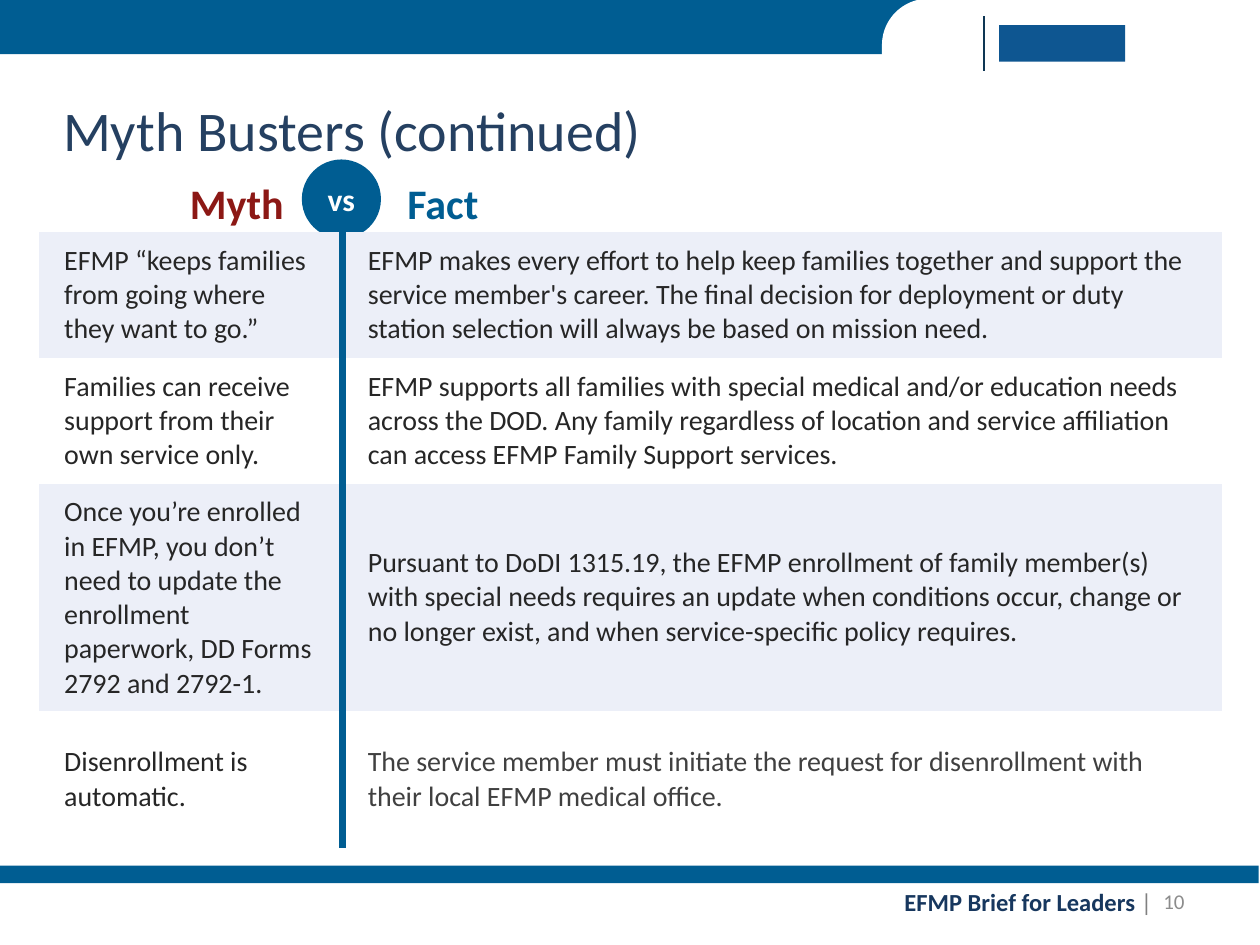
from lxml.etree import SubElement
from pptx import Presentation
from pptx.dml.color import RGBColor
from pptx.enum.shapes import MSO_CONNECTOR, MSO_SHAPE
from pptx.enum.text import MSO_ANCHOR, MSO_AUTO_SIZE, PP_ALIGN
from pptx.oxml import parse_xml
from pptx.oxml.ns import nsdecls, qn
from pptx.util import Inches, Pt

FONT = "Calibri"
BLUE = RGBColor(0x00, 0x5D, 0x92)
MARK_BLUE = RGBColor(0x0E, 0x56, 0x91)
RULE_NAVY = RGBColor(0x0E, 0x36, 0x54)
FOOTER_NAVY = RGBColor(0x17, 0x37, 0x5E)
TITLE_NAVY = RGBColor(0x25, 0x40, 0x61)
RED = RGBColor(0x8C, 0x18, 0x15)
INK = RGBColor(0x26, 0x26, 0x26)
SOFT_INK = RGBColor(0x40, 0x40, 0x40)
GREY = RGBColor(0x80, 0x80, 0x80)
NUMBER_GREY = RGBColor(0x8C, 0x8C, 0x8C)
BAND = RGBColor(0xEC, 0xEF, 0xF8)
WHITE = RGBColor(0xFF, 0xFF, 0xFF)

PLAIN_TABLE_STYLE = "{2D5ABB26-0587-4C30-8999-92F81FD0307C}"
COLUMN_WIDTHS = (2.41, 6.98)
ROW_HEIGHTS = (1, 1, 1.8, 1.09)
MYTHS_AND_FACTS = (
    ("EFMP “keeps families from going where they want to go.”",
     "EFMP makes every effort to help keep families together and support the "
     "service member's career. The final decision for deployment or duty "
     "station selection will always be based on mission need."),
    ("Families can receive support from their\nown service only.",
     "EFMP supports all families with special medical and/or education needs "
     "across the DOD. Any family regardless of location and service "
     "affiliation can access EFMP Family Support services."),
    ("Once you’re enrolled in EFMP, you don’t need to update the enrollment "
     "paperwork, DD Forms 2792 and 2792-1.",
     "Pursuant to DoDI 1315.19, the EFMP enrollment of family member(s) with "
     "special needs requires an update when conditions occur, change or no "
     "longer exist, and when service-specific policy requires."),
    ("Disenrollment is automatic.",
     "The service member must initiate the request for disenrollment with "
     "their local EFMP medical office."),
)


def inches(*values):
    return [Inches(value) for value in values]


def format_text(frame, size, color, bold=False, align=PP_ALIGN.LEFT):
    for paragraph in frame.paragraphs:
        paragraph.alignment = align
        for span in paragraph.runs:
            span.font.name = FONT
            span.font.size = Pt(size)
            span.font.bold = bold
            span.font.color.rgb = color


def add_shape(page, kind, place, color):
    shape = page.shapes.add_shape(kind, *inches(*place))
    shape.shadow.inherit = False
    shape.fill.solid()
    shape.fill.fore_color.rgb = color
    shape.line.fill.background()
    return shape


def add_line(page, start, end, color, width):
    line = page.shapes.add_connector(
        MSO_CONNECTOR.STRAIGHT, *inches(*start, *end))
    line.line.color.rgb = color
    line.line.width = Pt(width)
    SubElement(line._element.spPr, qn("a:effectLst"))


def add_label(page, place, text, size, color, bold=False,
              align=PP_ALIGN.LEFT, wrap=False):
    box = page.shapes.add_textbox(*inches(*place))
    frame = box.text_frame
    frame.word_wrap = wrap
    frame.text = text
    format_text(frame, size, color, bold, align)
    return frame


def add_title(page, text):
    title = page.shapes.title
    title.left, title.top, title.width, title.height = inches(0.4, 0.55, 9, 0.95)
    frame = title.text_frame
    frame.text = text
    frame.auto_size = MSO_AUTO_SIZE.NONE
    frame.vertical_anchor = MSO_ANCHOR.MIDDLE
    format_text(frame, 32, TITLE_NAVY)


def add_header(page):
    add_shape(page, MSO_SHAPE.RECTANGLE, (0, 0, 10, 0.43), BLUE)
    corner = add_shape(page, MSO_SHAPE.ROUND_2_DIAG_RECTANGLE,
                       (7, -0.01, 3, 1.6), WHITE)
    corner.adjustments[0] = 0.23
    corner.adjustments[1] = 0
    add_shape(page, MSO_SHAPE.RECTANGLE, (7.93, 0.2, 1, 0.29), MARK_BLUE)
    add_line(page, (7.81, 0.13), (7.81, 0.56), RULE_NAVY, 1)


def add_footer(page):
    add_shape(page, MSO_SHAPE.RECTANGLE, (-0.01, 6.87, 10, 0.14), BLUE)
    frame = add_label(page, (7.08, 6.99, 2.23, 0.34),
                      "EFMP Brief for Leaders ", 14, FOOTER_NAVY, bold=True)
    divider = frame.paragraphs[0].add_run()
    divider.text = "| "
    divider.font.name = FONT
    divider.font.size = Pt(14)
    divider.font.color.rgb = GREY
    number = add_label(page, (7.17, 6.95, 2.33, 0.4), "10", 12, NUMBER_GREY,
                       align=PP_ALIGN.RIGHT, wrap=True)
    number.vertical_anchor = MSO_ANCHOR.MIDDLE


def add_versus_heading(page):
    add_label(page, (1.4, 1.36, 0.96, 0.5), "Myth", 24, RED, True,
              PP_ALIGN.CENTER)
    add_line(page, (2.71, 1.64), (2.71, 6.67), BLUE, 3.75)
    badge = add_shape(page, MSO_SHAPE.OVAL, (2.41, 1.28, 0.6, 0.6), BLUE)
    badge.line.color.rgb = BLUE
    badge.line.width = Pt(2)
    frame = badge.text_frame
    frame.margin_left = frame.margin_right = 0
    frame.vertical_anchor = MSO_ANCHOR.MIDDLE
    frame.text = "vs"
    format_text(frame, 18, WHITE, True, PP_ALIGN.CENTER)
    add_label(page, (3.13, 1.36, 0.77, 0.5), "Fact", 24, BLUE, True,
              PP_ALIGN.CENTER)


def add_cell_border(cell, side):
    """Draw the thick divider on one side, "lnL" or "lnR", of a cell."""
    border = parse_xml(
        f'<a:{side} {nsdecls("a")} w="{Pt(4.5)}"><a:solidFill>'
        f'<a:srgbClr val="{BLUE}"/></a:solidFill></a:{side}>')
    cell._tc.get_or_add_tcPr().insert(0, border)


def fill_cell(cell, text, background, color):
    cell.fill.solid()
    cell.fill.fore_color.rgb = background
    cell.vertical_anchor = MSO_ANCHOR.MIDDLE
    cell.margin_left, cell.margin_right = inches(0.2, 0.19)
    cell.margin_top = cell.margin_bottom = Inches(0.09)
    cell.text_frame.text = text
    format_text(cell.text_frame, 16, color)


def add_myth_table(page):
    place = (0.31, 1.84, sum(COLUMN_WIDTHS), sum(ROW_HEIGHTS))
    table = page.shapes.add_table(
        len(ROW_HEIGHTS), len(COLUMN_WIDTHS), *inches(*place)).table
    table.first_row = table.horz_banding = False
    table._tbl.tblPr.find(qn("a:tableStyleId")).text = PLAIN_TABLE_STYLE
    for column, width in zip(table.columns, COLUMN_WIDTHS):
        column.width = Inches(width)
    for index, (height, texts) in enumerate(zip(ROW_HEIGHTS, MYTHS_AND_FACTS)):
        table.rows[index].height = Inches(height)
        background = WHITE if index % 2 else BAND
        last = index == len(ROW_HEIGHTS) - 1
        myth, fact = table.rows[index].cells
        fill_cell(myth, texts[0], background, INK)
        fill_cell(fact, texts[1], background, SOFT_INK if last else INK)
        add_cell_border(myth, "lnR")
        add_cell_border(fact, "lnL")


def main():
    deck = Presentation()
    deck.slide_width, deck.slide_height = inches(10, 7.5)
    page = deck.slides.add_slide(deck.slide_layouts[5])
    add_header(page)
    add_title(page, "Myth Busters (continued)")
    # The title stands in front of the white header corner.
    page.shapes._spTree.append(page.shapes.title._element)
    add_versus_heading(page)
    add_myth_table(page)
    add_footer(page)
    deck.save("out.pptx")


if __name__ == "__main__":
    main()
